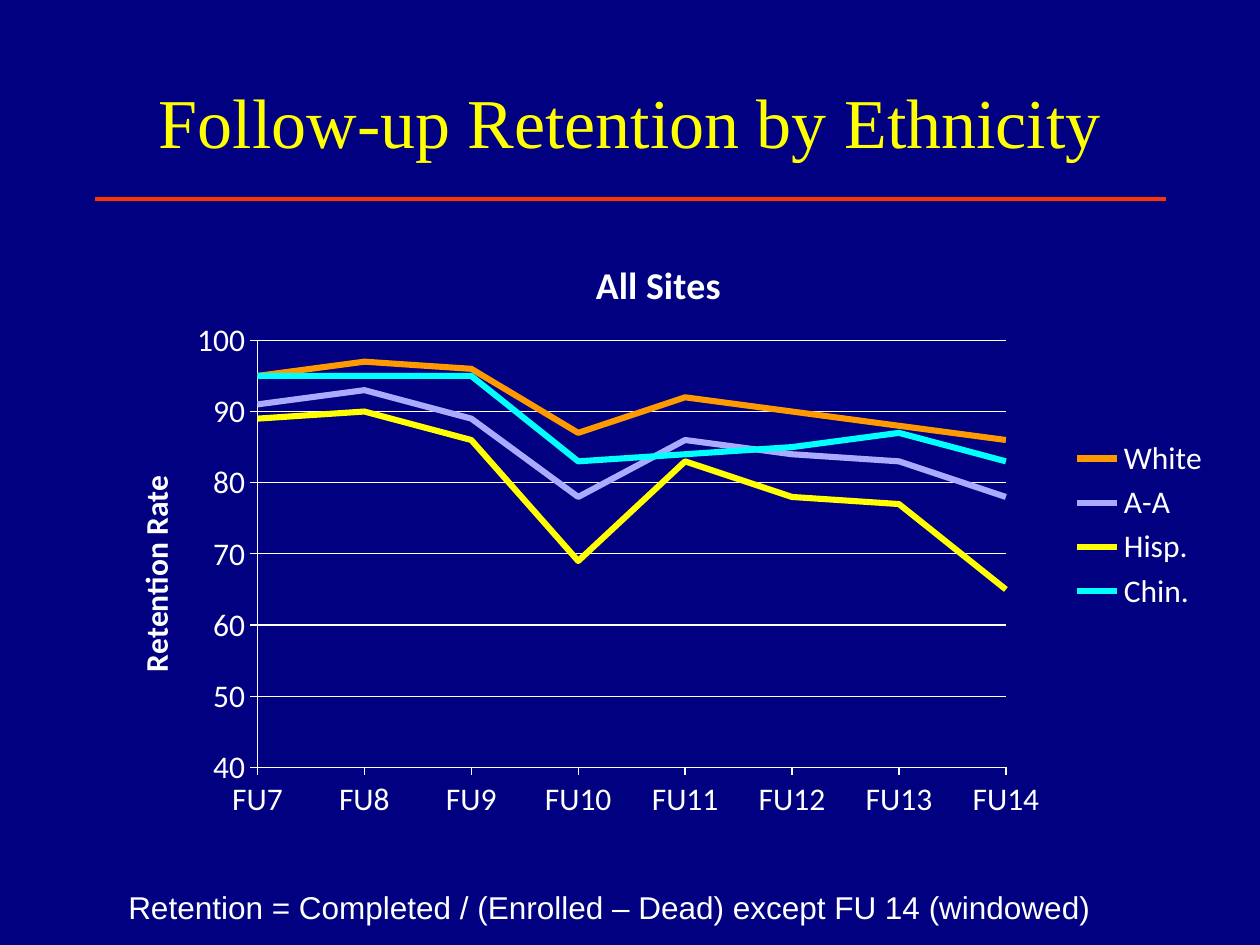
from lxml import etree
from pptx import Presentation
from pptx import util as u
from pptx.chart.data import CategoryChartData
from pptx.dml.color import RGBColor
from pptx.enum import chart as c, shapes, text
from pptx.oxml.ns import qn

COLORS = {
    "background": "000080", "title": "FFFF00", "rule": "FF3300", "text": "FFFFFF",
    "White": "FF9900", "A-A": "AAAAFF", "Hisp.": "FFFF00", "Chin.": "00FFFF",
}
VISITS = [f"FU{number}" for number in range(7, 15)]
RETENTION = {
    "White": [95, 97, 96, 87, 92, 90, 88, 86],
    "A-A": [91, 93, 89, 78, 86, 84, 83, 78],
    "Hisp.": [89, 90, 86, 69, 83, 78, 77, 65],
    "Chin.": [95, 95, 95, 83, 84, 85, 87, 83],
}


def rgb(name):
    """Return the named colour."""
    return RGBColor.from_string(COLORS[name])


def format_font(font, size, name, color="text", bold=False):
    """Set size, typeface, colour and weight of a font."""
    font.size, font.name, font.bold = u.Pt(size), name, bold
    font.color.rgb = rgb(color)


def format_line(line, color, width):
    """Set colour and width of a line."""
    line.color.rgb = rgb(color)
    line.width = u.Pt(width)


def write_text(frame, words, align=None, **font):
    """Put one formatted paragraph into a text frame."""
    paragraph = frame.paragraphs[0]
    paragraph.alignment = align
    run = paragraph.add_run()
    run.text = words
    format_font(run.font, **font)


def place(element, index, **fractions):
    """Give a chart part a manual layout in fractions of the chart."""
    for old in element.findall(qn("c:layout")):
        element.remove(old)
    layout = etree.Element(qn("c:layout"))
    manual = etree.SubElement(layout, qn("c:manualLayout"))
    if element.tag == qn("c:plotArea"):
        etree.SubElement(manual, qn("c:layoutTarget"), val="inner")
    for key in ("x", "y"):
        etree.SubElement(manual, qn(f"c:{key}Mode"), val="edge")
    for key, value in fractions.items():
        etree.SubElement(manual, qn(f"c:{key}"), val=str(value))
    element.insert(index, layout)


def add_title(slide):
    """Fill and position the title placeholder."""
    title = slide.shapes.title
    title.left, title.top = u.Inches(0.75), u.Inches(0.33)
    title.width, title.height = u.Inches(8.5), u.Inches(1.25)
    title.text_frame.vertical_anchor = text.MSO_ANCHOR.MIDDLE
    write_text(title.text_frame, "Follow-up Retention by Ethnicity",
               align=text.PP_ALIGN.CENTER, size=40, name="Times New Roman", color="title")


def add_rule(slide):
    """Draw the line under the title."""
    rule = slide.shapes.add_connector(
        shapes.MSO_CONNECTOR.STRAIGHT,
        u.Inches(0.75), u.Inches(1.58), u.Inches(9.25), u.Inches(1.58))
    format_line(rule.line, "rule", 2)
    etree.SubElement(rule.element.spPr, qn("a:effectLst"))


def add_footnote(slide):
    """Add the definition of retention."""
    box = slide.shapes.add_textbox(u.Inches(0.92), u.Inches(7), u.Inches(8.5), u.Inches(0.4))
    box.text_frame.word_wrap = True
    box.text_frame.auto_size = text.MSO_AUTO_SIZE.SHAPE_TO_FIT_TEXT
    write_text(box.text_frame,
               "Retention = Completed / (Enrolled – Dead) except FU 14 (windowed)",
               size=18, name="Arial")


def format_axes(chart):
    """Set scale, ticks, gridlines and value title of the axes."""
    for axis in (chart.category_axis, chart.value_axis):
        axis.major_tick_mark = c.XL_TICK_MARK.OUTSIDE
        axis.minor_tick_mark = c.XL_TICK_MARK.NONE
        format_line(axis.format.line, "text", 0.75)
        format_font(axis.tick_labels.font, 18, "Calibri")
    axis = chart.value_axis
    axis.minimum_scale, axis.maximum_scale, axis.major_unit = 40, 100, 10
    axis.has_major_gridlines = True
    format_line(axis.major_gridlines.format.line, "text", 0.75)
    axis_title = axis.axis_title
    write_text(axis_title.text_frame, "Retention Rate", size=18, name="Calibri", bold=True)
    body = axis_title._element.find(".//" + qn("a:bodyPr"))
    body.set("rot", "-5400000")
    body.set("vert", "horz")
    place(axis_title._element, 1, x=0.03, y=0.41)
    value_axis = axis._element
    for old in value_axis.findall(qn("c:crossBetween")):
        value_axis.remove(old)
    crossing = etree.Element(qn("c:crossBetween"), val="midCat")
    value_axis.find(qn("c:crosses")).addnext(crossing)


def add_retention_chart(slide):
    """Add the line chart of retention by visit."""
    data = CategoryChartData()
    data.categories = VISITS
    for group, rates in RETENTION.items():
        data.add_series(group, rates)
    chart = slide.shapes.add_chart(
        c.XL_CHART_TYPE.LINE, u.Inches(0.75), u.Inches(1.75),
        u.Inches(8.92), u.Inches(4.83), data).chart
    format_font(chart.font, 18, "Calibri")
    chart.has_title = True
    write_text(chart.chart_title.text_frame, "All Sites", size=21.6, name="Calibri", bold=True)
    place(chart.chart_title._element, 1, x=0.44, y=0.05)
    format_axes(chart)
    chart.plots[0].vary_by_categories = False
    for series in chart.plots[0].series:
        series.smooth = False
        series.marker.style = c.XL_MARKER_STYLE.NONE
        format_line(series.format.line, series.name, 3.5)
    chart.has_legend = True
    chart.legend.position = c.XL_LEGEND_POSITION.RIGHT
    chart.legend.include_in_layout = False
    format_font(chart.legend.font, 18, "Calibri")
    place(chart.legend._element, 1, x=0.86, y=0.35, w=0.14, h=0.3)
    plot_area = chart._chartSpace.find(".//" + qn("c:plotArea"))
    place(plot_area, 0, x=0.145, y=0.197, w=0.666, h=0.702)


def main():
    """Build and save the slide."""
    presentation = Presentation()
    presentation.slide_width, presentation.slide_height = u.Inches(10), u.Inches(7.5)
    slide = presentation.slides.add_slide(presentation.slide_layouts[5])
    slide.background.fill.solid()
    slide.background.fill.fore_color.rgb = rgb("background")
    add_rule(slide)
    add_title(slide)
    add_footnote(slide)
    add_retention_chart(slide)
    presentation.save("out.pptx")


if __name__ == "__main__":
    main()
